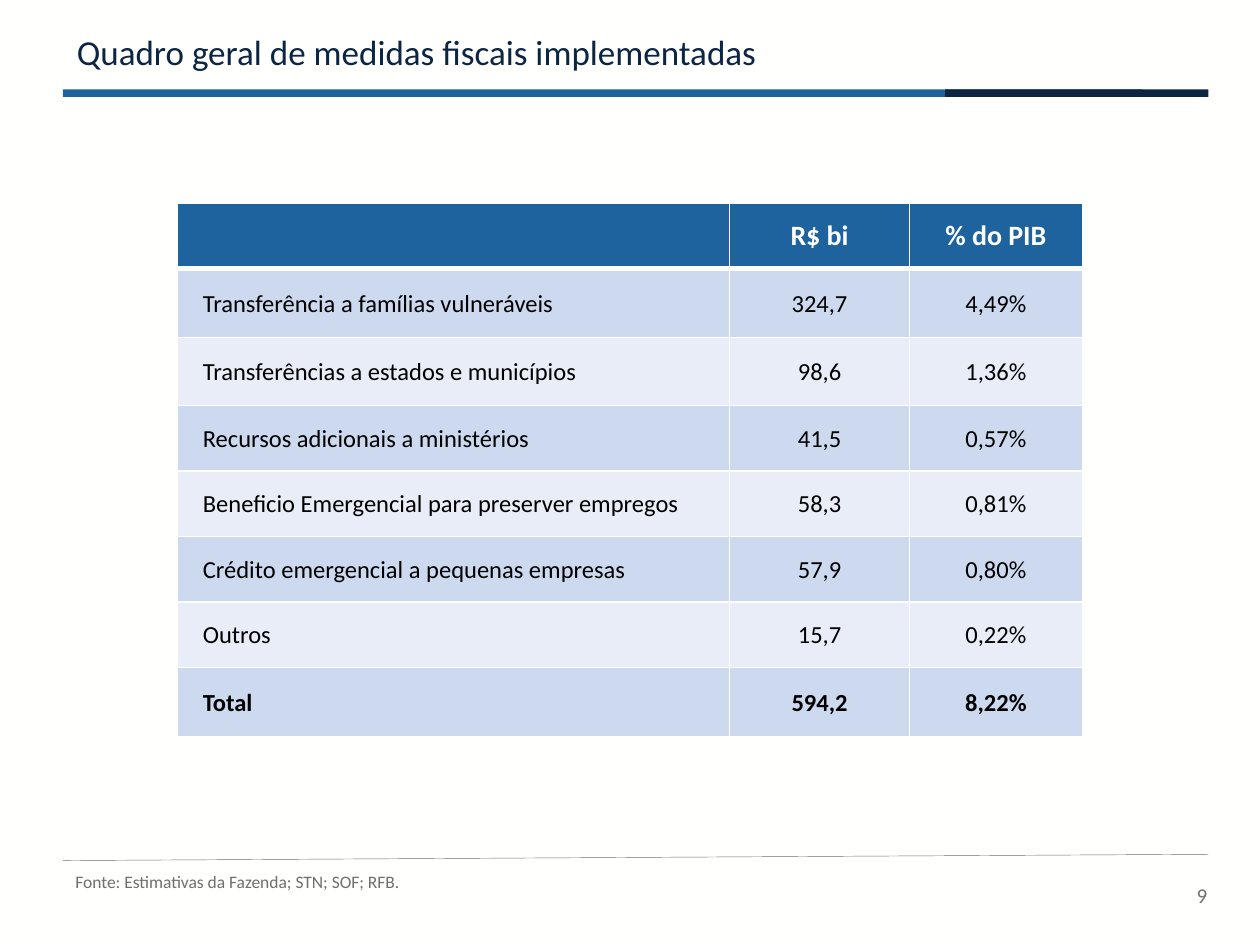
from lxml import etree
from pptx import Presentation
from pptx import util as u
from pptx.dml.color import RGBColor
from pptx.enum import shapes, text
from pptx.oxml.ns import qn

# Content
TITLE = "Quadro geral de medidas fiscais implementadas"
SOURCE = "Fonte: Estimativas da Fazenda; STN; SOF; RFB."
PAGE = "9"
ROWS = [
    ("", "R$ bi", "% do PIB"),
    ("Transferência a famílias vulneráveis", "324,7", "4,49%"),
    ("Transferências a estados e municípios", "98,6", "1,36%"),
    ("Recursos adicionais a ministérios", "41,5", "0,57%"),
    ("Beneficio Emergencial para preserver empregos", "58,3", "0,81%"),
    ("Crédito emergencial a pequenas empresas", "57,9", "0,80%"),
    ("Outros", "15,7", "0,22%"),
    ("Total", "594,2", "8,22%"),
]

# Look and grid, in inches
FONT = "Calibri"
NAVY, BLUE, GRAY, WHITE = "0B2543", "1F639E", "6D706D", "FFFFFF"
HEAD, BANDS = "1E629E", ("E8EDF7", "CDD9EF")
WIDE, HIGH = 10, 7.5
LEFT, RIGHT = 0.5, 9.59
COLS = (4.38, 1.43, 1.37)
TALL = (0.52, 0.55, 0.54, 0.52, 0.52, 0.52, 0.52, 0.55)
TOP = 1.61
ALIGN = text.PP_ALIGN
ANCHOR = text.MSO_ANCHOR


def color(code):
    return RGBColor.from_string(code)


def inches(*sizes):
    return [u.Inches(s) for s in sizes]


def write(frame, words, size=14, ink="000000", bold=False,
          align=ALIGN.LEFT, space=None):
    para = frame.paragraphs[0]
    para.alignment = align
    para.line_spacing = space
    run = para.add_run()
    run.text = words
    font = run.font
    font.name, font.size, font.bold = FONT, u.Pt(size), bold
    font.color.rgb = color(ink)


def label(slide, box, words, **look):
    frame = slide.shapes.add_textbox(*inches(*box)).text_frame
    frame.word_wrap = True
    write(frame, words, **look)


def bar(slide, box, fill):
    shape = slide.shapes.add_shape(shapes.MSO_SHAPE.RECTANGLE, *inches(*box))
    shape.shadow.inherit = False
    shape.fill.solid()
    shape.fill.fore_color.rgb = color(fill)
    shape.line.fill.background()


def rule(slide, ends, ink, width):
    line = slide.shapes.add_connector(
        shapes.MSO_CONNECTOR.STRAIGHT, *inches(*ends))
    line.line.color.rgb = color(ink)
    line.line.width = u.Pt(width)
    etree.SubElement(line._element.spPr, qn("a:effectLst"))


def border(cell, base):
    props = cell._tc.get_or_add_tcPr()
    for side, width in zip("LRTB", (1, 1, 1, base)):
        edge = etree.SubElement(props, qn("a:ln" + side), w=str(u.Pt(width)))
        fill = etree.SubElement(edge, qn("a:solidFill"))
        etree.SubElement(fill, qn("a:srgbClr"), val=WHITE)


def grid(slide):
    wide, tall = sum(COLS), sum(TALL)
    box = inches((WIDE - wide) / 2, TOP, wide, tall)
    table = slide.shapes.add_table(len(ROWS), len(COLS), *box).table
    for col, size in zip(table.columns, COLS):
        col.width = u.Inches(size)
    for r, row in enumerate(ROWS):
        table.rows[r].height = u.Inches(TALL[r])
        head = r == 0
        for c, words in enumerate(row):
            cell = table.cell(r, c)
            cell.vertical_anchor = ANCHOR.MIDDLE
            cell.margin_left = u.Inches(0.01 if c else 0.2)
            cell.margin_top = cell.margin_right = u.Inches(0.01)
            cell.margin_bottom = 0
            border(cell, 3 if head else 1)
            cell.fill.solid()
            cell.fill.fore_color.rgb = color(HEAD if head else BANDS[r % 2])
            if words:
                write(cell.text_frame, words, size=16 if head else 14,
                      ink=WHITE if head else "000000",
                      bold=head or r == len(ROWS) - 1,
                      align=ALIGN.CENTER if c else ALIGN.LEFT)


def main():
    deck = Presentation()
    deck.slide_width, deck.slide_height = inches(WIDE, HIGH)
    slide = deck.slides.add_slide(deck.slide_layouts[5])
    back = slide.background.fill
    back.solid()
    back.fore_color.rgb = color("FFFFFE")

    # Page number, header bars and footer rule
    label(slide, (9.07, 6.99, 0.61, 0.4), PAGE, size=12, ink=GRAY,
          align=ALIGN.RIGHT, space=0.8)
    bar(slide, (LEFT, 0.71, 8.57, 0.06), BLUE)
    bar(slide, (7.5, 0.71, RIGHT - 7.5, 0.06), NAVY)
    rule(slide, (LEFT, 6.83, RIGHT, 6.78), GRAY, 0.25)

    # Title
    title = slide.shapes.title
    title.left, title.top, title.width, title.height = inches(
        0.51, 0.26, 8.15, 0.38)
    frame = title.text_frame
    frame.vertical_anchor = ANCHOR.TOP
    frame.auto_size = text.MSO_AUTO_SIZE.NONE
    write(frame, TITLE, size=20, ink=NAVY, space=0.8)

    # Table and source
    grid(slide)
    label(slide, (LEFT, 6.86, 4.41, 0.36), SOURCE, size=10, ink=GRAY)
    deck.save("out.pptx")


if __name__ == "__main__":
    main()
